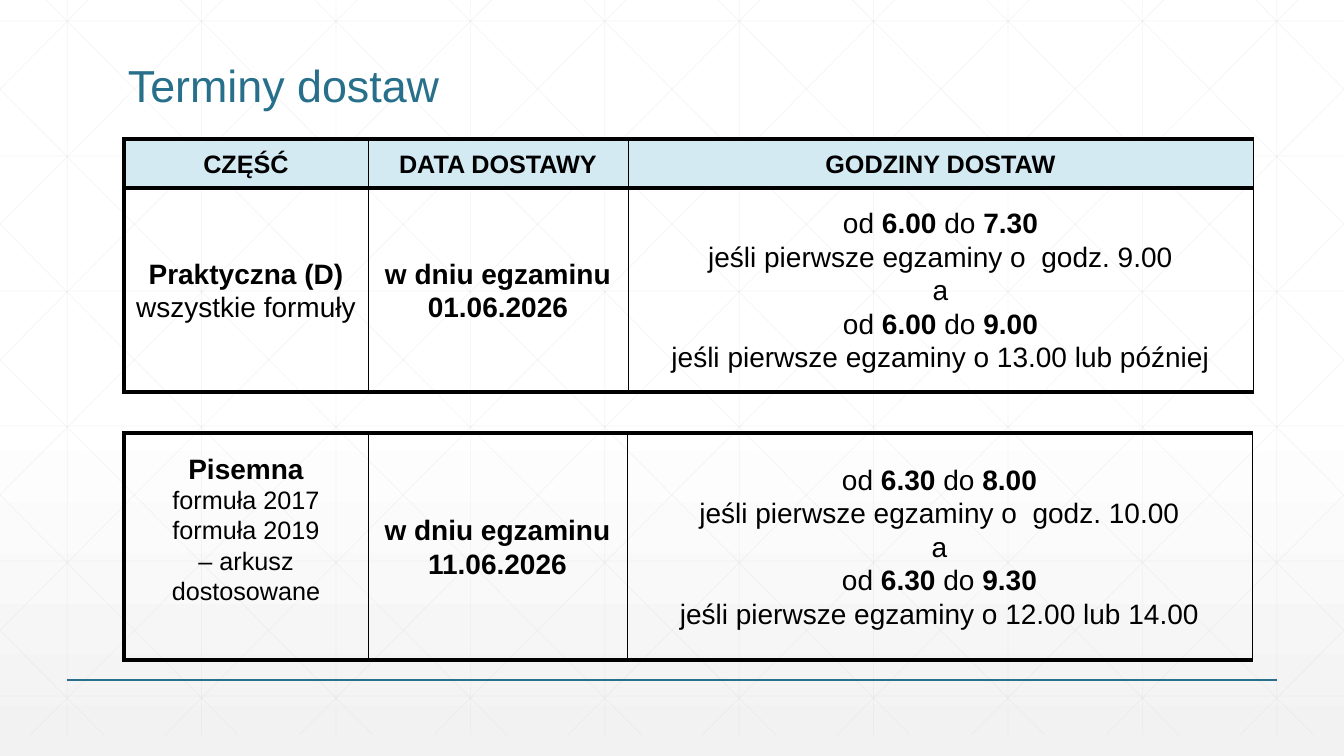
from copy import deepcopy
from dataclasses import dataclass

from pptx import Presentation
from pptx.dml.color import RGBColor as RGB
from pptx.enum.shapes import MSO_CONNECTOR as Connector
from pptx.enum.text import MSO_ANCHOR as Anchor, PP_ALIGN as Align
from pptx.oxml.ns import qn
from pptx.oxml.xmlchemy import OxmlElement as Element
from pptx.util import Pt

TITLE = "Terminy dostaw"
HEADERS = ("CZĘŚĆ", "DATA DOSTAWY", "GODZINY DOSTAW")
# Each cell is a list of lines; **...** marks bold, "small:" the smaller size.
PRACTICAL = (
    ["**Praktyczna (D)**", "wszystkie formuły"],
    ["**w dniu egzaminu**", "**01.06.2026**"],
    ["od **6.00** do **7.30**", "jeśli pierwsze egzaminy o  godz. 9.00", "a",
     "od **6.00** do **9.00**", "jeśli pierwsze egzaminy o 13.00 lub później"],
)
WRITTEN = (
    ["**Pisemna**", "small:formuła 2017", "small:formuła 2019",
     "small:– arkusz dostosowane"],
    ["**w dniu egzaminu**", "**11.06.2026**"],
    ["od **6.30** do **8.00**", "jeśli pierwsze egzaminy o  godz. 10.00", "a",
     "od **6.30** do **9.30**", "jeśli pierwsze egzaminy o 12.00 lub 14.00"],
)
HEADER_ROW = tuple([f"small:**{header}**"] for header in HEADERS)


@dataclass(frozen=True)
class Theme:
    font: str = "Arial"
    accent: RGB = RGB(0x27, 0x6F, 0x8B)
    text: RGB = RGB(0, 0, 0)
    header: RGB = RGB(0xD4, 0xEA, 0xF3)
    lattice: RGB = RGB(0xD9, 0xD9, 0xD9)
    top: RGB = RGB(0xFF, 0xFF, 0xFF)
    bottom: RGB = RGB(0xF2, 0xF2, 0xF2)
    title_size: int = 32
    body_size: int = 20
    small_size: int = 18
    thick: float = 3
    thin: float = 0.75


THEME = Theme()
WIDTH, HEIGHT = 1344, 756
EMU_PER_PX = 12192000 / WIDTH
LATTICE_BOTTOM = 735
COLUMN_STEP, ROW_STEP = WIDTH / 10, 135
DIAGONAL_START, DIAGONAL_SLOPE = 46, 1.007
CELL_INSET = 5


def px(length):
    return round(length * EMU_PER_PX)


def paint_background(slide):
    fill = slide.background.fill
    fill.gradient()
    fill.gradient_angle = 270
    middle, end = fill.gradient_stops
    middle.color.rgb, middle.position = THEME.top, 0
    end.color.rgb, end.position = THEME.bottom, 1
    stops = slide.background._cSld.find(".//" + qn("a:gsLst"))
    stops.insert(1, deepcopy(stops[0]))
    fill.gradient_stops[1].position = 0.53


def draw_line(slide, start, end, color, width, opacity=None):
    line = slide.shapes.add_connector(
        Connector.STRAIGHT, *(px(value) for value in (*start, *end)))
    line.line.color.rgb = color
    line.line.width = Pt(width)
    properties = line._element.spPr
    properties.append(Element("a:effectLst"))
    if opacity is not None:
        alpha = Element("a:alpha")
        alpha.set("val", str(opacity * 1000))
        properties.find(".//" + qn("a:srgbClr")).append(alpha)


def lattice_lines():
    """Yield the ends of the uprights, levels and mirrored diagonals."""
    for i in range(10):
        x = COLUMN_STEP * (i + 0.5)
        yield (x, 0), (x, LATTICE_BOTTOM)
    for i in range(6):
        y = 21 + ROW_STEP * i
        yield (0, y), (WIDTH, y)
    for i in range(-5, 10):
        x = DIAGONAL_START + COLUMN_STEP * i
        left = max(x, 0)
        right = min(x + LATTICE_BOTTOM / DIAGONAL_SLOPE, WIDTH)
        top, bottom = ((side - x) * DIAGONAL_SLOPE for side in (left, right))
        yield (left, top), (right, bottom)
        yield (WIDTH - left, top), (WIDTH - right, bottom)


def style(paragraph, size, color, spacing, align):
    paragraph.alignment = align
    paragraph.line_spacing = spacing
    font = paragraph.font
    font.name, font.size, font.color.rgb = THEME.font, Pt(size), color


def write_lines(frame, lines):
    for i, line in enumerate(lines):
        paragraph = frame.add_paragraph() if i else frame.paragraphs[0]
        text = line.removeprefix("small:")
        size = THEME.body_size if text == line else THEME.small_size
        style(paragraph, size, THEME.text, 1.07, Align.CENTER)
        for part, piece in enumerate(text.split("**")):
            if piece:
                run = paragraph.add_run()
                run.text = piece
                run.font.bold = part % 2 == 1


def add_borders(cell, left_width):
    sides = {"L": left_width, "R": THEME.thin, "T": THEME.thick, "B": THEME.thick}
    for side, width in sides.items():
        border = Element(f"a:ln{side}")
        border.set("w", str(Pt(width)))
        color = Element("a:srgbClr")
        color.set("val", str(THEME.text))
        fill = Element("a:solidFill")
        fill.append(color)
        border.append(fill)
        cell._tc.get_or_add_tcPr().append(border)


def add_schedule(slide, top, columns, heights, rows):
    table = slide.shapes.add_table(
        len(rows), len(columns), px(124), px(top),
        px(sum(columns)), px(sum(heights))).table
    table.first_row = table.horz_banding = False
    for column, width in zip(table.columns, columns):
        column.width = px(width)
    for r, (height, row) in enumerate(zip(heights, rows)):
        table.rows[r].height = px(height)
        for c, lines in enumerate(row):
            cell = table.cell(r, c)
            add_borders(cell, THEME.thin if c else THEME.thick)
            if row is HEADER_ROW:
                cell.fill.solid()
                cell.fill.fore_color.rgb = THEME.header
            else:
                cell.fill.background()
            cell.vertical_anchor = Anchor.MIDDLE
            cell.margin_left = cell.margin_right = px(CELL_INSET)
            cell.margin_top = cell.margin_bottom = 0
            write_lines(cell.text_frame, lines)
    return table


def add_title(slide):
    frame = slide.shapes.add_textbox(px(118), px(39), px(1109), px(78)).text_frame
    frame.word_wrap = True
    frame.vertical_anchor = Anchor.BOTTOM
    title = frame.paragraphs[0]
    title.text = TITLE
    style(title, THEME.title_size, THEME.accent, 0.9, Align.LEFT)


def main():
    deck = Presentation()
    deck.slide_width, deck.slide_height = px(WIDTH), px(HEIGHT)
    slide = deck.slides.add_slide(deck.slide_layouts[6])
    paint_background(slide)
    for start, end in lattice_lines():
        draw_line(slide, start, end, THEME.lattice, 0.5, opacity=25)
    draw_line(slide, (67, 680), (1277, 680), THEME.accent, 1)
    add_title(slide)
    add_schedule(slide, 139, (244, 260, 625), (49, 204), (HEADER_ROW, PRACTICAL))
    written = add_schedule(slide, 433, (244, 259, 625), (227,), (WRITTEN,))
    written.cell(0, 0).margin_bottom = px(36)
    deck.save("out.pptx")


if __name__ == "__main__":
    main()
